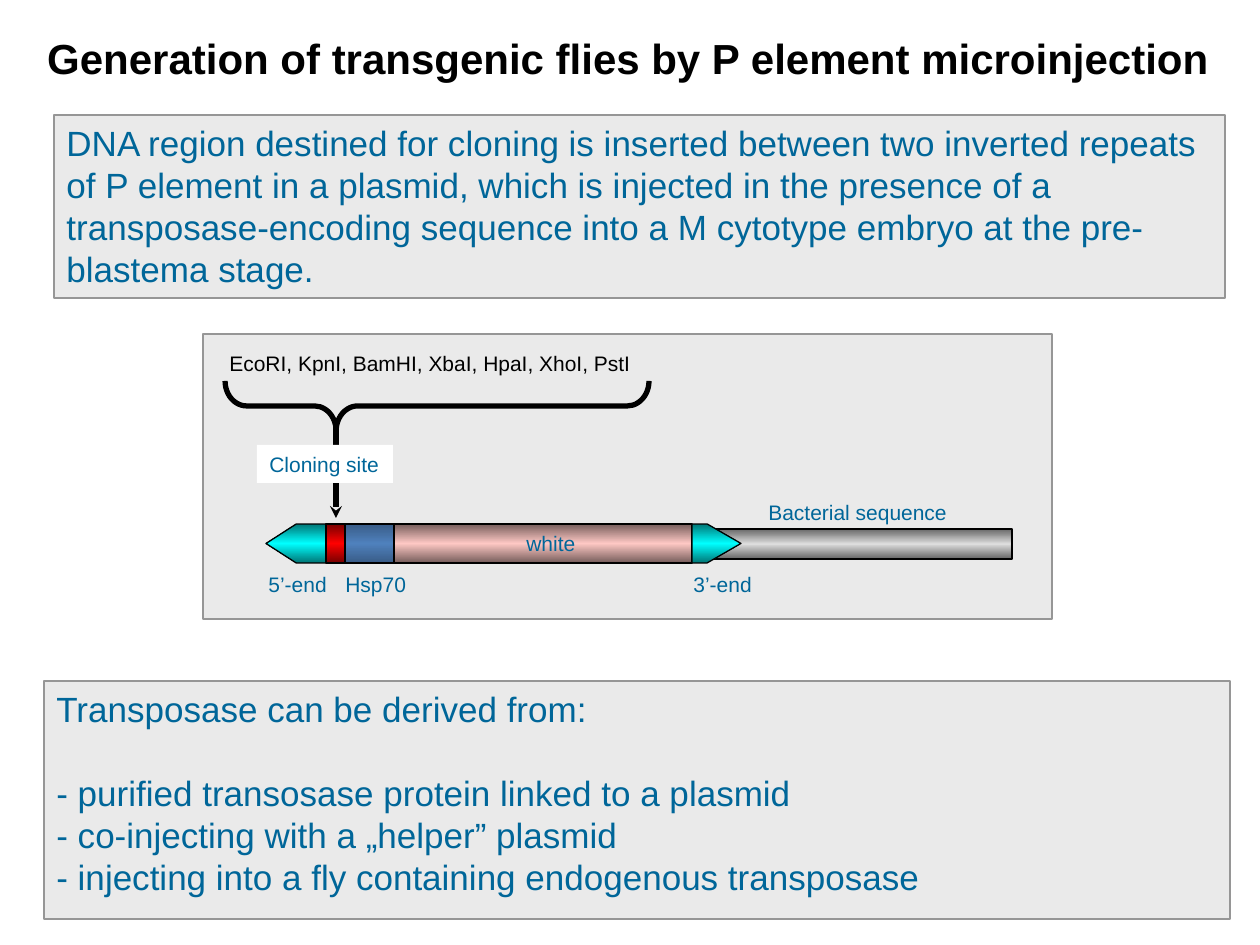
from copy import deepcopy

from lxml import etree
from pptx import Presentation
from pptx.dml.color import RGBColor
from pptx.enum.shapes import MSO_CONNECTOR, MSO_SHAPE
from pptx.enum.text import MSO_ANCHOR, PP_ALIGN
from pptx.oxml.ns import qn
from pptx.util import Pt

PX = 914400 // 126  # EMU in one px

BLACK = RGBColor(0x00, 0x00, 0x00)
WHITE = RGBColor(0xFF, 0xFF, 0xFF)
BLUE = RGBColor(0x00, 0x66, 0x99)
PANEL_FILL = RGBColor(0xEA, 0xEA, 0xEA)
PANEL_LINE = RGBColor(0x96, 0x96, 0x96)
# Tube shading: (edge, middle)
CYAN = RGBColor(0x00, 0x76, 0x76), RGBColor(0x00, 0xFF, 0xFF)
RED = RGBColor(0x76, 0x00, 0x00), RGBColor(0xFF, 0x00, 0x00)
STEEL = RGBColor(0x39, 0x5C, 0x87), RGBColor(0x4F, 0x81, 0xBD)
PINK = RGBColor(0x76, 0x5D, 0x5B), RGBColor(0xFE, 0xC8, 0xC4)
GREY = RGBColor(0x66, 0x66, 0x66), RGBColor(0xDD, 0xDD, 0xDD)

# Content: boxes are (left, top, width, height) in px
TITLE = "Generation of transgenic flies by P element microinjection"
TITLE_BOX = (20, 26, 1216, 63)
INTRO = [
    "DNA region destined for cloning is inserted between two inverted repeats "
    "of P element in a plasmid, which is injected in the presence of a "
    "transposase-encoding sequence into a M cytotype embryo at the pre-blastema stage."
]
INTRO_BOX = (54, 115, 1171, 183)
SOURCES = [
    "Transposase can be derived from:",
    "- purified transosase protein linked to a plasmid",
    "- co-injecting with a „helper” plasmid",
    "- injecting into a fly containing endogenous transposase",
]
SOURCES_BOX = (44, 681, 1186, 238)

MAP_BOX = (203, 334, 849, 285)
BACKBONE_BOX = (714, 529, 298, 30)
TRACK_LEFT, TRACK_TOP, TRACK_HEIGHT = 266, 524, 39
SEGMENTS = [  # width, shading, point of the end arrow, rotation
    (60, CYAN, 0.774, 180),
    (19, RED, None, 0),
    (49, STEEL, None, 0),
    (298, PINK, None, 0),
    (49, CYAN, 0.867, 0),
]
LABEL_HEIGHT = 38
LABELS = [  # text, left, top, width, colour
    ("5’-end", 256, 565, 84, BLUE),
    ("3’-end", 681, 565, 84, BLUE),
    ("white", 514, 524, 79, BLUE),
    ("Bacterial sequence", 756, 493, 205, BLUE),
    ("Hsp70", 333, 565, 88, BLUE),
    ("EcoRI, KpnI, BamHI, XbaI, HpaI, XhoI, PstI", 217, 344, 444, BLACK),
]
BRACE_BOX = (412, 194, 50, 424)  # before its quarter turn
ARROW = (336, 423, 336, 518)
SITE, SITE_BOX = "Cloning site", (257, 445, 136, LABEL_HEIGHT)


def emu(lengths):
    return [length * PX for length in lengths]


def write(shape, lines, size, color, wrap=True, bold=False, align=PP_ALIGN.LEFT):
    frame = shape.text_frame
    frame.word_wrap = wrap
    frame.vertical_anchor = MSO_ANCHOR.TOP
    frame.text = "\n".join(lines)
    style = {"name": "Arial", "size": Pt(size), "bold": bold}
    for paragraph in frame.paragraphs:
        paragraph.alignment = align
        for run in paragraph.runs:
            for key, value in style.items():
                setattr(run.font, key, value)
            run.font.color.rgb = color
    return frame


def add_shape(shapes, kind, box, fill=None, line=None, weight=1):
    shape = shapes.add_shape(kind, *emu(box))
    shape.shadow.inherit = False
    if fill is None:
        shape.fill.background()
    else:
        shape.fill.solid()
        shape.fill.fore_color.rgb = fill
    if line is None:
        shape.line.fill.background()
    else:
        shape.line.color.rgb = line
        shape.line.width = Pt(weight)
    return shape


def add_panel(shapes, box):
    return add_shape(shapes, MSO_SHAPE.RECTANGLE, box, PANEL_FILL, PANEL_LINE)


def add_tube(shapes, kind, box, shading):
    tube = add_shape(shapes, kind, box, line=BLACK, weight=0.75)
    edge, middle = shading
    tube.fill.gradient()
    tube.fill.gradient_angle = 270
    stop_list = next(tube._element.spPr.iter(qn("a:gsLst")))
    stop_list.append(deepcopy(stop_list[0]))
    for stop, position, color in zip(tube.fill.gradient_stops, (0, 0.5, 1), (edge, middle, edge)):
        stop.position = position
        stop.color.rgb = color
    return tube


prs = Presentation()
prs.slide_width, prs.slide_height = emu((1260, 945))
slide = prs.slides.add_slide(prs.slide_layouts[6])

# Title and text panels
title = slide.shapes.add_textbox(*emu(TITLE_BOX))
write(title, [TITLE], 24, BLACK, bold=True, align=PP_ALIGN.CENTER)
write(add_panel(slide.shapes, INTRO_BOX), INTRO, 20, BLUE)
sources = write(add_panel(slide.shapes, SOURCES_BOX), SOURCES, 20, BLUE)
sources.paragraphs[1].space_before = Pt(24)

# Plasmid map: backbone, then the inserted segments end to end
plasmid = slide.shapes.add_group_shape().shapes
add_panel(plasmid, MAP_BOX)
add_tube(plasmid, MSO_SHAPE.RECTANGLE, BACKBONE_BOX, GREY)
left = TRACK_LEFT
for width, shading, point, rotation in SEGMENTS:
    kind = MSO_SHAPE.PENTAGON if point else MSO_SHAPE.RECTANGLE
    segment = add_tube(plasmid, kind, (left, TRACK_TOP, width, TRACK_HEIGHT), shading)
    segment.rotation = rotation
    if point:
        segment.adjustments[0] = point
    left += width

# Labels
for text, left, top, width, color in LABELS:
    label = plasmid.add_textbox(*emu((left, top, width, LABEL_HEIGHT)))
    write(label, [text], 12, color, wrap=False)

# Restriction sites lead to the cloning site
brace = add_shape(plasmid, MSO_SHAPE.RIGHT_BRACE, BRACE_BOX, line=BLACK, weight=3)
brace.rotation = 90
brace.adjustments[0], brace.adjustments[1] = 0.432, 0.738

arrow = plasmid.add_connector(MSO_CONNECTOR.STRAIGHT, *emu(ARROW))
arrow.line.color.rgb = BLACK
arrow.line.width = Pt(3.5)
etree.SubElement(arrow.line._get_or_add_ln(), qn("a:tailEnd"), type="stealth", w="sm", len="sm")
etree.SubElement(arrow._element.spPr, qn("a:effectLst"))

site = add_shape(plasmid, MSO_SHAPE.RECTANGLE, SITE_BOX, WHITE)
write(site, [SITE], 12, BLUE, wrap=False)

prs.save("out.pptx")
